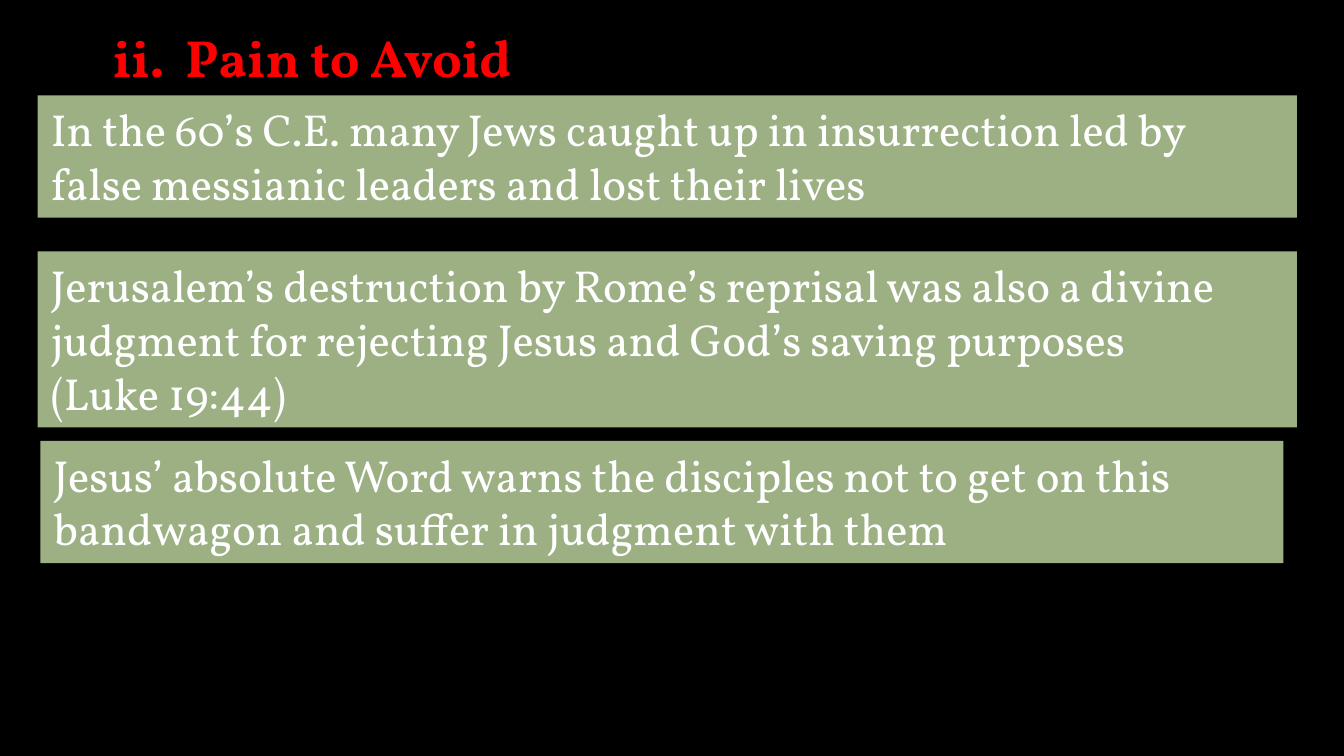
from pptx import Presentation
from pptx.dml.color import RGBColor as RGB
from pptx.enum.shapes import MSO_SHAPE as Shape
from pptx.enum.text import MSO_ANCHOR as Anchor, MSO_AUTO_SIZE as Fit, PP_ALIGN as Align
from pptx.util import Inches, Pt

HEX = {"back": "000000", "title": "FF0000", "panel": "9CB084", "text": "FFFFFF"}
FONT = "Vollkorn"
LEFT, WIDE = 0.28, 9.37

# Left, top, width, height and paragraphs of each panel
PANELS = [
    (LEFT, 0.71, WIDE, 0.91,
     ["In the 60’s C.E. many Jews caught up in insurrection led by "
      "false messianic leaders and lost their lives"]),
    (LEFT, 1.87, WIDE, 1.31,
     ["Jerusalem’s destruction by Rome’s reprisal was also a divine "
      "judgment for rejecting Jesus and God’s saving purposes",
      "(Luke 19:44)"]),
    (0.3, 3.28, 9.25, 0.91,
     ["Jesus’ absolute Word warns the disciples not to get on this "
      "bandwagon and suffer in judgment with them"]),
]


def write(shape, lines, size, color, bold=False):
    frame = shape.text_frame
    frame.text = "\n".join(lines)
    frame.word_wrap = True
    frame.auto_size = Fit.NONE
    frame.vertical_anchor = Anchor.TOP
    for para in frame.paragraphs:
        para.alignment = Align.LEFT
        font = para.font
        font.name, font.size, font.bold = FONT, Pt(size), bold
        font.color.rgb = RGB.from_string(HEX[color])


# Wide 16:9 slide with a black background
deck = Presentation()
deck.slide_width = Inches(10)
deck.slide_height = deck.slide_width * 9 // 16
slide = deck.slides.add_slide(deck.slide_layouts[5])
back = slide.background.fill
back.solid()
back.fore_color.rgb = RGB.from_string(HEX["back"])

# Title, indented from the panels' left edge
title = slide.shapes.title
title.left, title.top = Inches(LEFT), Inches(0.14)
title.width, title.height = Inches(7.17), Inches(0.57)
write(title, ["ii.  Pain to Avoid"], 28, "title", True)
title.text_frame.margin_left = Inches(0.56)

# Text panels
for *box, lines in PANELS:
    panel = slide.shapes.add_shape(Shape.RECTANGLE, *map(Inches, box))
    panel.shadow.inherit = False
    panel.fill.solid()
    panel.fill.fore_color.rgb = RGB.from_string(HEX["panel"])
    panel.line.fill.background()
    write(panel, lines, 24, "text")

deck.save("out.pptx")
